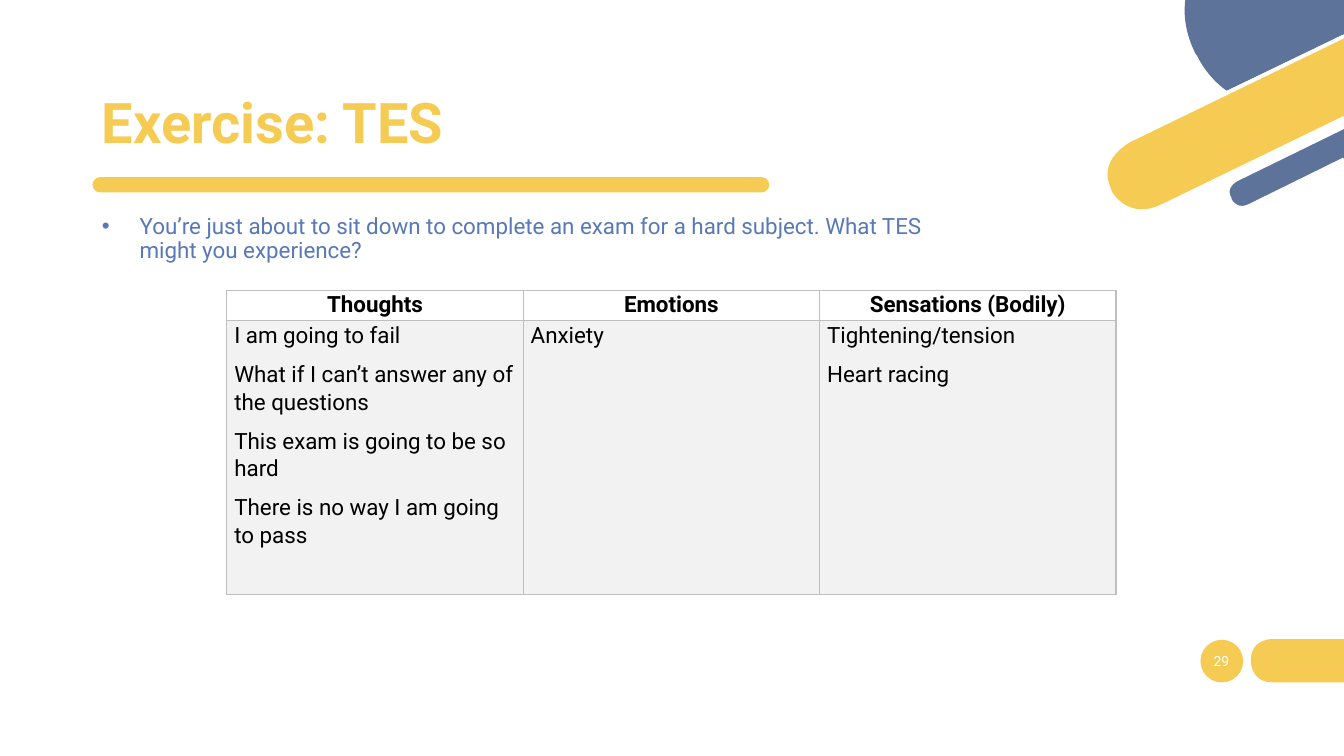
from dataclasses import dataclass

from lxml import etree
from pptx import Presentation
from pptx.dml.color import RGBColor
from pptx.enum.shapes import MSO_SHAPE
from pptx.enum.text import MSO_ANCHOR, MSO_AUTO_SIZE, PP_ALIGN
from pptx.oxml.ns import qn
from pptx.util import Pt

LEFT, CENTER = PP_ALIGN.LEFT, PP_ALIGN.CENTER
TOP, MIDDLE, BOTTOM = MSO_ANCHOR.TOP, MSO_ANCHOR.MIDDLE, MSO_ANCHOR.BOTTOM
OVAL, ROUNDED = MSO_SHAPE.OVAL, MSO_SHAPE.ROUNDED_RECTANGLE
NO_AUTOFIT = MSO_AUTO_SIZE.NONE


@dataclass(frozen=True)
class Theme:
    font: str = "Roboto"
    yellow: str = "F6CB53"
    slate: str = "5D739A"
    blue: str = "5879B5"
    white: str = "FFFFFF"
    black: str = "000000"
    grey: str = "F2F2F2"
    border: str = "BFBFBF"
    title_size: int = 40
    text_size: int = 16
    number_size: int = 10


THEME = Theme()
WIDTH, HEIGHT = 960, 540
CURVE_STEPS = 16

CIRCLE = [(855.4, 40.3), (855.4, 40.3, 861.8, 54.7, 876.2, 64.8), (WIDTH, 24.5),
          (WIDTH, 0), (846.7, 0), (845.3, 10.8, 846.7, 23.8, 853.9, 38.2)]
WIDE_BAND = [(WIDTH, 25.9), (807.1, 100.1), (807.1, 100.1, 781.2, 113, 792.7, 136.1),
             (792.7, 136.8), (792.7, 136.8, 804.2, 159.8, 830.9, 146.9), (WIDTH, 84.2)]
THIN_BAND = [(WIDTH, 90.7), (883.4, 128.2), (883.4, 128.2, 873.4, 133.2, 878.4, 141.8),
             (878.4, 142.6), (878.4, 142.6, 882.7, 151.9, 892.8, 146.9), (WIDTH, 113.8)]
NUMBER_TAB = [(WIDTH, 456.5), (908.6, 456.5), (908.6, 456.5, 893.5, 456.5, 893.5, 471.6),
              (893.5, 472.3), (893.5, 472.3, 893.5, 487.4, 908.6, 487.4), (WIDTH, 487.4)]

COLUMNS = [
    ("Thoughts", ["I am going to fail", "What if I can’t answer any of the questions",
                  "This exam is going to be so hard", "There is no way I am going to pass"]),
    ("Emotions", ["Anxiety"]),
    ("Sensations (Bodily)", ["Tightening/tension", "Heart racing"]),
]


def color(value):
    return RGBColor.from_string(value)


def paint(shape, fill, rim=None):
    shape.shadow.inherit = False
    shape.fill.solid()
    shape.fill.fore_color.rgb = color(fill)
    if rim:
        shape.line.color.rgb = color(rim)
        shape.line.width = Pt(2.6)
    else:
        shape.line.fill.background()


def curve_points(start, curve):
    xs, ys = (start[0], *curve[::2]), (start[1], *curve[1::2])
    for step in range(1, CURVE_STEPS + 1):
        t = step / CURVE_STEPS
        weights = ((1 - t) ** 3, 3 * t * (1 - t) ** 2, 3 * t * t * (1 - t), t ** 3)
        yield tuple(sum(w * v for w, v in zip(weights, values)) for values in (xs, ys))


def add_outline(page, segments, fill, rim=None):
    points = [segments[0]]
    for segment in segments[1:]:
        points.extend([segment] if len(segment) == 2 else curve_points(points[-1], segment))
    corners = [(Pt(x), Pt(y)) for x, y in points]
    builder = page.shapes.build_freeform(*corners[0], scale=1.0)
    builder.add_line_segments(corners[1:], close=rim is None)
    paint(builder.convert_to_shape(), fill, rim)


def add_preset(page, kind, area, fill):
    shape = page.shapes.add_shape(kind, *map(Pt, area))
    paint(shape, fill)
    return shape


def place(box, area):
    box.left, box.top, box.width, box.height = map(Pt, area)


def write(frame, lines, size, ink, bold=False, align=LEFT, spacing=1.0, gap=0):
    frame.text = "\n".join(lines)
    for index, para in enumerate(frame.paragraphs):
        para.alignment = align
        para.line_spacing = spacing
        para.space_before = Pt(gap if index else 0)
        for span in para.runs:
            span.font.name = THEME.font
            span.font.size = Pt(size)
            span.font.bold = bold
            span.font.color.rgb = color(ink)


def fit(frame, anchor):
    frame.word_wrap = True
    frame.auto_size = NO_AUTOFIT
    frame.vertical_anchor = anchor


def remove_bullets(frame):
    for para in frame.paragraphs:
        properties = para._p.get_or_add_pPr()
        properties.set("marL", "0")
        properties.set("indent", "0")
        etree.SubElement(properties, qn("a:buNone"))


def add_borders(cell):
    properties = cell._tc.get_or_add_tcPr()
    for side in ("lnL", "lnR", "lnT", "lnB"):
        line = etree.SubElement(properties, qn(f"a:{side}"), w=str(Pt(1)))
        fill = etree.SubElement(line, qn("a:solidFill"))
        etree.SubElement(fill, qn("a:srgbClr"), val=THEME.border)


def fill_cell(cell, lines, header):
    cell.margin_left = cell.margin_right = Pt(5.4)
    cell.margin_top = cell.margin_bottom = Pt(0)
    add_borders(cell)
    if header:
        cell.fill.background()
    else:
        cell.fill.solid()
        cell.fill.fore_color.rgb = color(THEME.grey)
    write(cell.text_frame, lines, THEME.text_size, THEME.black, bold=header,
          align=CENTER if header else LEFT, spacing=1.07, gap=8)


def add_answers(page):
    heights = (21.6, 195.5)
    area = map(Pt, (162, 207.5, 635.2, sum(heights)))
    table = page.shapes.add_table(len(heights), len(COLUMNS), *area).table
    for row, height in zip(table.rows, heights):
        row.height = Pt(height)
    for index, (heading, answers) in enumerate(COLUMNS):
        fill_cell(table.cell(0, index), [heading], True)
        fill_cell(table.cell(1, index), answers, False)


def add_decoration(page):
    add_outline(page, NUMBER_TAB, THEME.yellow)
    add_outline(page, CIRCLE, THEME.slate)
    add_outline(page, WIDE_BAND, THEME.yellow, THEME.white)
    add_outline(page, THIN_BAND, THEME.slate, THEME.white)
    add_preset(page, OVAL, (857.5, 457, 30.5, 30.5), THEME.yellow)
    underline = add_preset(page, ROUNDED, (66, 126.5, 483.5, 11), THEME.yellow)
    underline.adjustments[0] = 0.5


def add_texts(page):
    title, body = page.placeholders
    place(title, (65.5, 61.2, 828, 53.3))
    fit(title.text_frame, BOTTOM)
    write(title.text_frame, ["Exercise: TES"], THEME.title_size, THEME.yellow,
          bold=True, spacing=0.9)

    place(body, (65.5, 149.8, 635.8, 358.6))
    fit(body.text_frame, TOP)
    remove_bullets(body.text_frame)
    write(body.text_frame, ["You’re just about to sit down to complete an exam for a hard "
                            "subject. What TES might you experience?"],
          THEME.text_size, THEME.blue, spacing=0.9)

    number = page.shapes.add_textbox(*map(Pt, (851, 458, 43, 28.8)))
    fit(number.text_frame, MIDDLE)
    write(number.text_frame, ["29"], THEME.number_size, THEME.white, align=CENTER)


def main():
    deck = Presentation()
    deck.slide_width, deck.slide_height = Pt(WIDTH), Pt(HEIGHT)
    page = deck.slides.add_slide(deck.slide_layouts[1])
    add_decoration(page)
    add_texts(page)
    add_answers(page)
    deck.save("out.pptx")


if __name__ == "__main__":
    main()
